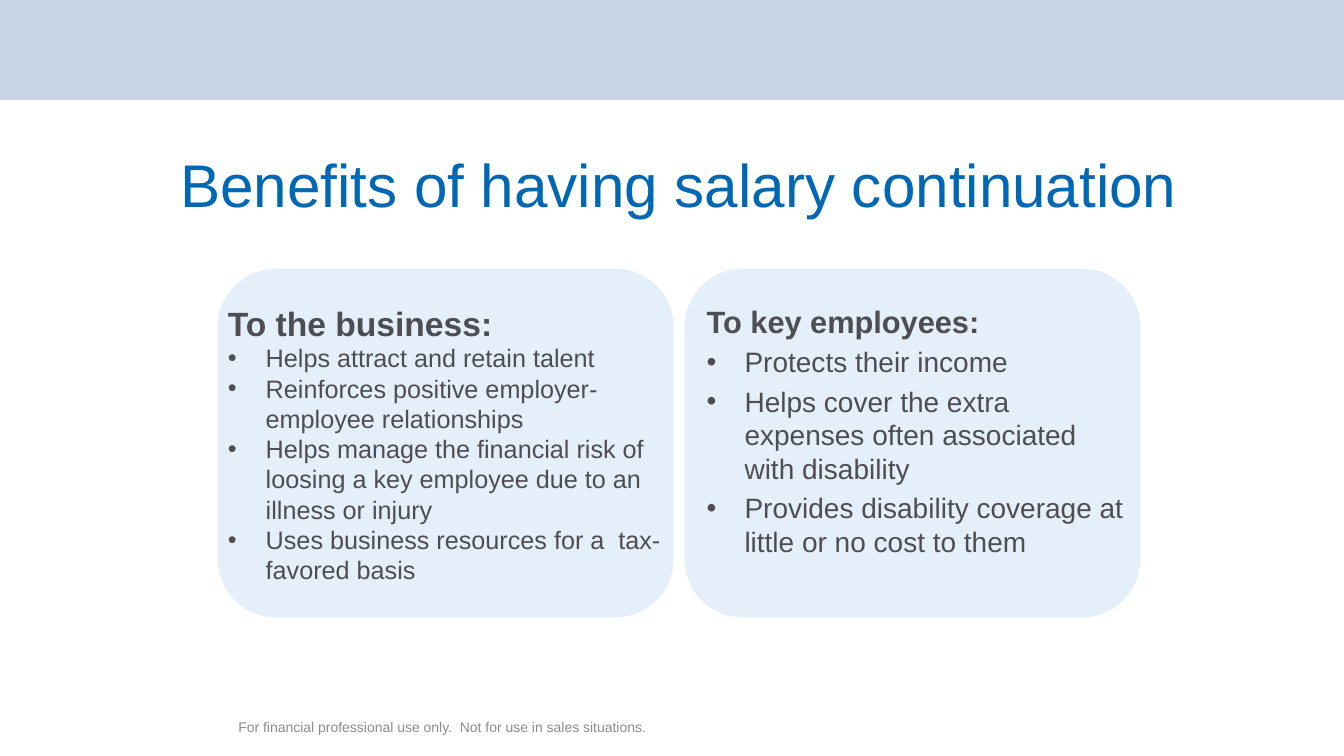
from lxml.etree import SubElement
from pptx import Presentation
from pptx.dml.color import RGBColor
from pptx.enum.shapes import MSO_SHAPE as Shape
from pptx.enum.text import MSO_ANCHOR as Anchor, MSO_AUTO_SIZE as AutoSize, PP_ALIGN as Align
from pptx.oxml.ns import qn
from pptx.util import Pt

BAND = RGBColor(0xC8, 0xD3, 0xE6)
CARD = RGBColor(0xE4, 0xEF, 0xF9)
BLUE = RGBColor(0x00, 0x68, 0xB3)
INK = RGBColor(0x4D, 0x4E, 0x53)
GREY = RGBColor(0x8C, 0x8C, 0x8C)


class SlideBuilder:
    font = "Arial"
    hanging = 27

    def __init__(self, page):
        self.page = page

    def block(self, kind, left, top, width, height, color):
        box = self.page.shapes.add_shape(kind, Pt(left), Pt(top), Pt(width), Pt(height))
        box.shadow.inherit = False
        box.fill.solid()
        box.fill.fore_color.rgb = color
        box.line.fill.background()

    def place(self, box, left, top, width, height, anchor):
        box.left, box.top, box.width, box.height = Pt(left), Pt(top), Pt(width), Pt(height)
        # Bring the text in front of the cards
        box.element.getparent().append(box.element)
        frame = box.text_frame
        frame.word_wrap = True
        frame.auto_size = AutoSize.NONE
        frame.vertical_anchor = anchor
        return frame

    def span(self, para, text, size, color, bold=False):
        span = para.add_run()
        span.text = text
        span.font.name = self.font
        span.font.size = Pt(size)
        span.font.bold = bold
        span.font.color.rgb = color

    def title(self, text, left, top, width, height):
        frame = self.place(self.page.shapes.title, left, top, width, height, Anchor.MIDDLE)
        para = frame.paragraphs[0]
        para.alignment = Align.CENTER
        para.line_spacing = 0.9
        self.span(para, text, 43, BLUE)

    def note(self, text, left, top, width, height):
        box = self.page.shapes.add_textbox(0, 0, 0, 0)
        para = self.place(box, left, top, width, height, Anchor.MIDDLE).paragraphs[0]
        para.alignment = Align.CENTER
        self.span(para, text, 10, GREY)

    def bullet(self, para, shown):
        props = para._p.get_or_add_pPr()
        props.set("marL", str(Pt(self.hanging) if shown else 0))
        props.set("indent", str(-Pt(self.hanging) if shown else 0))
        if shown:
            SubElement(props, qn("a:buFont"), typeface=self.font)
            SubElement(props, qn("a:buChar"), char="•")
        else:
            SubElement(props, qn("a:buNone"))

    def benefits(self, index, area, heading, items, sizes, gap):
        frame = self.place(self.page.placeholders[index], *area, Anchor.TOP)
        for number, text in enumerate([heading, *items]):
            is_item = number > 0
            para = frame.add_paragraph() if is_item else frame.paragraphs[0]
            self.bullet(para, is_item)
            para.space_before = Pt(gap if is_item else 0)
            self.span(para, text, sizes[is_item], INK, bold=not is_item)


def main():
    deck = Presentation()
    deck.slide_width, deck.slide_height = Pt(960), Pt(540)
    builder = SlideBuilder(deck.slides.add_slide(deck.slide_layouts[3]))

    # Top band and the two cards
    builder.block(Shape.RECTANGLE, 0, 0, 960, 71.3, BAND)
    for left in (155.6, 489):
        builder.block(Shape.ROUNDED_RECTANGLE, left, 192, 325.6, 249, CARD)

    # Title
    builder.title("Benefits of having salary continuation", 72, 113, 825, 42)

    # Benefit lists
    builder.benefits(1, (155.6, 212.4, 325.6, 211), "To the business:", [
        "Helps attract and retain talent",
        "Reinforces positive employer-employee relationships",
        "Helps manage the financial risk of loosing a key employee due to an illness or injury",
        "Uses business resources for a  tax-favored basis",
    ], (24, 18), 0)
    builder.benefits(2, (497.6, 212.4, 317, 194), "To key employees:", [
        "Protects their income",
        "Helps cover the extra expenses often associated with disability",
        "Provides disability coverage at little or no cost to them",
    ], (22, 20), 4)

    # Usage note
    builder.note("For financial professional use only.  Not for use in sales situations.",
                 147, 508.5, 337.5, 21.5)

    deck.save("out.pptx")


if __name__ == "__main__":
    main()
